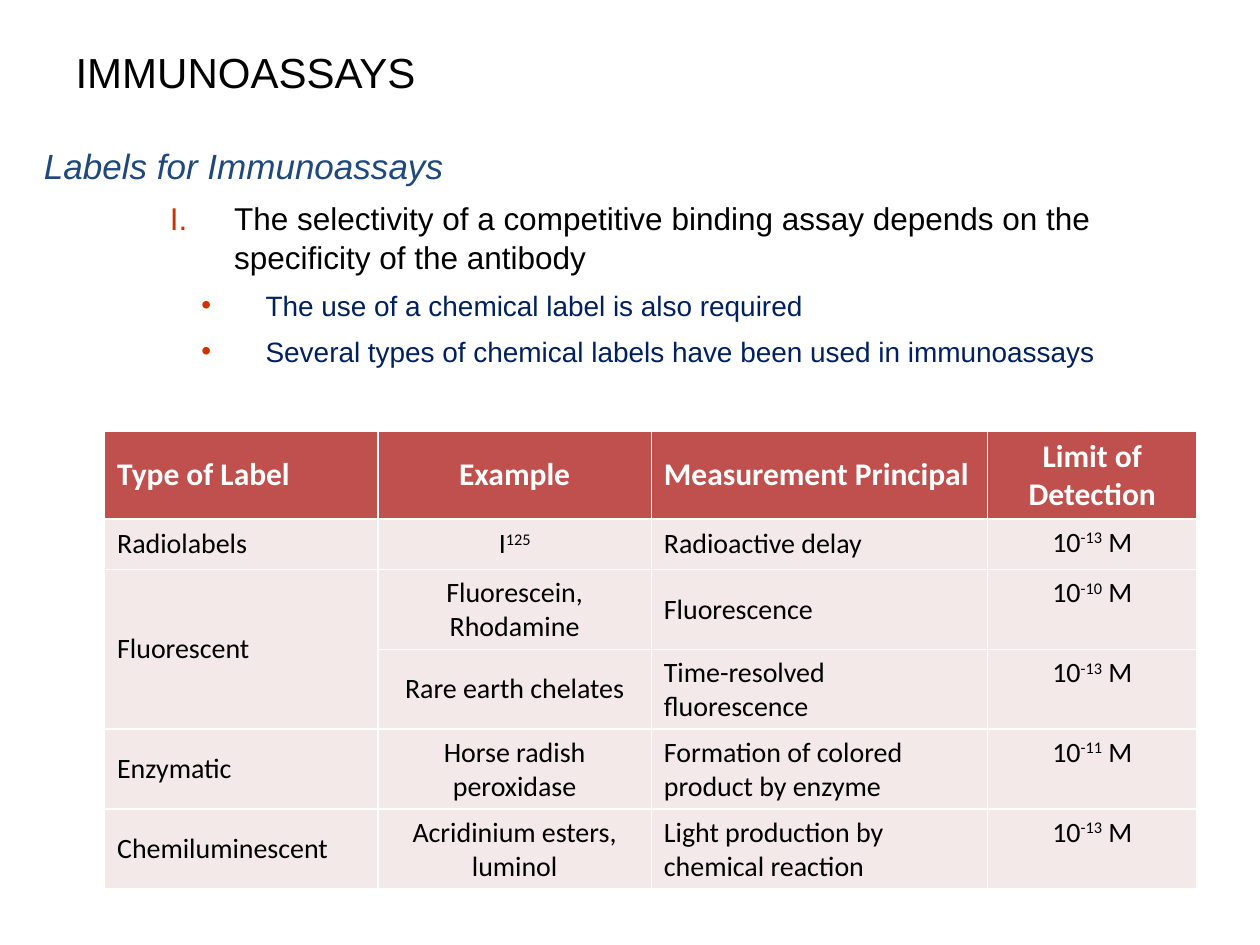
"""Build the slide on labels for immunoassays, with its table of label types."""
from lxml import etree
from pptx import Presentation
from pptx.dml.color import RGBColor
from pptx.enum.text import MSO_ANCHOR, MSO_AUTO_SIZE, PP_ALIGN
from pptx.oxml.ns import qn
from pptx.util import Inches, Pt

LEFT, CENTER = PP_ALIGN.LEFT, PP_ALIGN.CENTER
TOP, MIDDLE = MSO_ANCHOR.TOP, MSO_ANCHOR.MIDDLE
NO_FIT = MSO_AUTO_SIZE.NONE
BLACK = RGBColor(0x00, 0x00, 0x00)
WHITE = RGBColor(0xFF, 0xFF, 0xFF)
BLUE = RGBColor(0x1F, 0x49, 0x7D)
NAVY = RGBColor(0x00, 0x20, 0x60)
ORANGE = RGBColor(0xCC, 0x33, 0x00)
RED = RGBColor(0xC0, 0x50, 0x4D)
PINK = RGBColor(0xF4, 0xE9, 0xE9)


def write(p, text, font="Arial", size=16, color=BLACK, bold=False, italic=False, align=LEFT):
    """Add text to a paragraph, raising whatever stands between carets."""
    p.alignment = align
    for i, part in enumerate(text.split("^")):
        if part:
            r = p.add_run()
            r.text = part
            r.font.name, r.font.size, r.font.color.rgb = font, Pt(size), color
            r.font.bold, r.font.italic = bold, italic
            if i % 2:
                r.font._element.set("baseline", "30000")


prs = Presentation()
prs.slide_width, prs.slide_height = Inches(10), Inches(7.5)
s = prs.slides.add_slide(prs.slide_layouts[5])

title = s.shapes.title
title.left, title.top, title.width, title.height = Inches(0.5), Inches(0.08), Inches(9), Inches(0.75)
tf = title.text_frame
tf.auto_size, tf.vertical_anchor = NO_FIT, MIDDLE
write(tf.paragraphs[0], "IMMUNOASSAYS", size=24)
write(tf.paragraphs[0], " ", size=44)

body = s.shapes.add_textbox(Inches(0.25), Inches(1.08), Inches(9.59), Inches(1.83))
tf = body.text_frame
tf.word_wrap = True
NUMBER = ("a:buAutoNum", "type", "romanUcPeriod")
DOT = ("a:buChar", "char", "•")
points = [
    ("Labels for Immunoassays", 0, 0.5, None, dict(size=20, color=BLUE, italic=True)),
    ("The selectivity of a competitive binding assay depends on the specificity of the antibody",
     3, 1.51, NUMBER, dict(size=18)),
    ("The use of a chemical label is also required", 4, 1.76, DOT, dict(color=NAVY)),
    ("Several types of chemical labels have been used in immunoassays", 4, 1.76, DOT, dict(color=NAVY)),
]
for i, (text, level, margin, bullet, fmt) in enumerate(points):
    p = tf.add_paragraph() if i else tf.paragraphs[0]
    write(p, text, **fmt)
    p.level, p.space_after, p.line_spacing = level, Pt(6), 1.05
    pPr = p._p.get_or_add_pPr()
    pPr.set("marL", str(Inches(margin)))
    pPr.set("indent", str(Inches(-0.51 if bullet else -0.5)))
    if bullet:
        tag, key, value = bullet
        clr = etree.SubElement(pPr, qn("a:buClr"))
        etree.SubElement(clr, qn("a:srgbClr"), val=str(ORANGE))
        etree.SubElement(pPr, qn("a:buFont"), typeface="Arial")
        etree.SubElement(pPr, qn(tag)).set(key, value)

rows = [
    ("Type of Label", "Example", "Measurement Principal", "Limit of Detection"),
    ("Radiolabels", "I^125^", "Radioactive delay", "10^-13^ M"),
    ("Fluorescent", "Fluorescein,\nRhodamine", "Fluorescence", "10^-10^ M"),
    ("", "Rare earth chelates", "Time-resolved fluorescence", "10^-13^ M"),
    ("Enzymatic", "Horse radish peroxidase", "Formation of colored product by enzyme", "10^-11^ M"),
    ("Chemiluminescent", "Acridinium esters, luminol", "Light production by chemical reaction", "10^-13^ M"),
]
widths = [2.17, 2.17, 2.67, 1.66]
heights = [0.7, 0.4] + [0.63] * 4
frame = s.shapes.add_table(len(rows), len(widths), Inches(0.83), Inches(3.42),
                           Inches(sum(widths)), Inches(sum(heights)))
table = frame.table
for column, width in zip(table.columns, widths):
    column.width = Inches(width)
for i, (row, height) in enumerate(zip(rows, heights)):
    table.rows[i].height = Inches(height)
    fmt = dict(size=16) if i else dict(size=18, color=WHITE, bold=True)
    for j, text in enumerate(row):
        cell = table.cell(i, j)
        cell.fill.solid()
        cell.fill.fore_color.rgb = PINK if i else RED
        cell.vertical_anchor = TOP if i and j == 3 else MIDDLE
        for k, line in enumerate(text.split("\n")):
            p = cell.text_frame.add_paragraph() if k else cell.text_frame.paragraphs[0]
            write(p, line, font="Calibri", align=CENTER if j % 2 else LEFT, **fmt)
table.cell(2, 0).merge(table.cell(3, 0))

prs.save("out.pptx")
